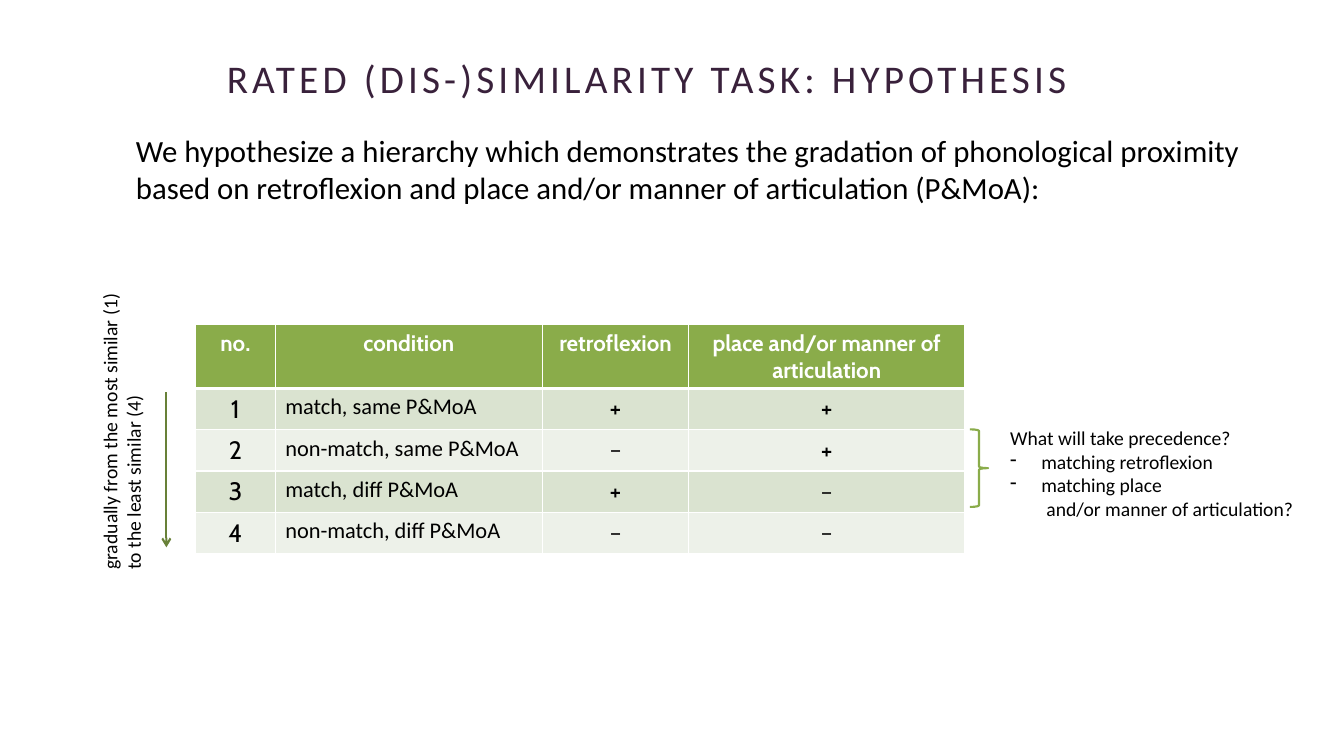
from dataclasses import dataclass

import lxml.etree
import pptx
import pptx.dml.color
import pptx.enum.shapes
import pptx.enum.text
import pptx.oxml.ns
import pptx.util

Inches = pptx.util.Inches
Pt = pptx.util.Pt
qn = pptx.oxml.ns.qn
ALIGN = pptx.enum.text.PP_ALIGN
ANCHOR = pptx.enum.text.MSO_ANCHOR


@dataclass(frozen=True)
class Theme:
    text: str = "000000"
    title: str = "39213B"
    white: str = "FFFFFF"
    green: str = "8AAC4A"
    arrow: str = "688138"
    bands: tuple = ("DAE3D0", "EDF1E9")
    body_font: str = "Calibri"
    table_font: str = "Cabin"
    title_size: int = 28
    body_size: int = 22
    mark_size: int = 18
    cell_size: int = 16
    note_size: int = 14


THEME = Theme()

HEADER = ("no.", "condition", "retroflexion", "place and/or manner of articulation")
CONDITIONS = (
    ("1", "match, same P&MoA", "+", "+"),
    ("2", "non-match, same P&MoA", "–", "+"),
    ("3", "match, diff P&MoA", "+", "–"),
    ("4", "non-match, diff P&MoA", "–", "–"),
)
COLUMN_WIDTHS = (0.79, 2.65, 1.45, 2.74)
HEADER_HEIGHT, ROW_HEIGHT = 0.62, 0.41


def rgb(color):
    return pptx.dml.color.RGBColor.from_string(color)


def set_font(p, size, color=THEME.text, name=THEME.body_font, bold=False):
    p.font.size = Pt(size)
    p.font.name = name
    p.font.bold = bold
    p.font.color.rgb = rgb(color)


def add_text(slide, box, lines, size, color=THEME.text, align=ALIGN.LEFT, wrap=True):
    s = slide.shapes.add_textbox(*map(Inches, box))
    tf = s.text_frame
    tf.word_wrap = wrap
    if not wrap:
        tf.auto_size = pptx.enum.text.MSO_AUTO_SIZE.SHAPE_TO_FIT_TEXT
    for i, line in enumerate(lines):
        p = tf.paragraphs[0] if i == 0 else tf.add_paragraph()
        p.text = line
        p.alignment = align
        set_font(p, size, color)
    return s


def add_title(slide, box):
    s = add_text(slide, box, ["RATED (DIS-)SIMILARITY TASK: HYPOTHESIS"],
                 THEME.title_size, THEME.title, ALIGN.CENTER)
    tf = s.text_frame
    tf.vertical_anchor = ANCHOR.BOTTOM
    tf.margin_right = Inches(0.6)
    p = tf.paragraphs[0]
    p.line_spacing = 0.9
    p.runs[0]._r.get_or_add_rPr().set("spc", "300")


def add_hypothesis(slide, box):
    s = add_text(slide, box, [
        "We hypothesize a hierarchy which demonstrates the gradation of phonological "
        "proximity based on retroflexion and place and/or manner of articulation (P&MoA):"
    ], THEME.body_size, align=ALIGN.JUSTIFY)
    s.text_frame.paragraphs[0].space_before = Pt(6)


def set_borders(cell, top, bottom):
    """Draw white borders, with the top and bottom widths in points."""
    tc_pr = cell._tc.get_or_add_tcPr()
    for side, width in (("L", 1), ("R", 1), ("T", top), ("B", bottom)):
        ln = lxml.etree.SubElement(tc_pr, qn(f"a:ln{side}"), w=str(Pt(width)))
        fill = lxml.etree.SubElement(ln, qn("a:solidFill"))
        lxml.etree.SubElement(fill, qn("a:srgbClr"), val=THEME.white)


def style_cell(cell, row, col):
    set_borders(cell, 3 if row == 1 else 1, 3 if row == 0 else 1)
    cell.fill.solid()
    p = cell.text_frame.paragraphs[0]
    p.alignment = ALIGN.LEFT if row and col == 1 else ALIGN.CENTER
    if row == 0:
        cell.fill.fore_color.rgb = rgb(THEME.green)
        set_font(p, THEME.cell_size, THEME.white, THEME.table_font, bold=True)
        return
    cell.fill.fore_color.rgb = rgb(THEME.bands[(row - 1) % 2])
    if col == 0:
        cell.vertical_anchor = ANCHOR.MIDDLE
    if col == 1:
        set_font(p, THEME.cell_size)
    else:
        name = THEME.body_font if cell.text == "–" else THEME.table_font
        set_font(p, THEME.mark_size, name=name)


def add_conditions(slide, left, top):
    rows = (HEADER, *CONDITIONS)
    heights = [HEADER_HEIGHT] + [ROW_HEIGHT] * len(CONDITIONS)
    box = (left, top, sum(COLUMN_WIDTHS), sum(heights))
    table = slide.shapes.add_table(len(rows), len(HEADER), *map(Inches, box)).table
    table.first_row = table.horz_banding = False
    for column, width in zip(table.columns, COLUMN_WIDTHS):
        column.width = Inches(width)
    for i, (values, height) in enumerate(zip(rows, heights)):
        table.rows[i].height = Inches(height)
        for j, value in enumerate(values):
            cell = table.cell(i, j)
            cell.text = value
            style_cell(cell, i, j)


def add_similarity_scale(slide, box):
    """Add the upward label and, on its right, the arrow pointing down."""
    left, top, width, height = box
    label = (left + (width - height) / 2, top + (height - width) / 2, height, width)
    s = add_text(slide, label,
                 ["gradually from the most similar (1)", "to the least similar (4)"],
                 THEME.note_size, wrap=False)
    s.rotation = 270
    x = left + width + 0.16
    line = slide.shapes.add_connector(
        pptx.enum.shapes.MSO_CONNECTOR.STRAIGHT,
        *map(Inches, (x, top + 1.14, x, top + 2.68)))
    line.line.color.rgb = rgb(THEME.arrow)
    line.line.width = Pt(1.5)
    lxml.etree.SubElement(line.line._get_or_add_ln(), qn("a:tailEnd"), type="arrow")
    lxml.etree.SubElement(line._element.spPr, qn("a:effectLst"))


def set_indent(p, margin, first=0.0, bullet=None):
    p_pr = p._p.get_or_add_pPr()
    p_pr.set("marL", str(Inches(margin)))
    p_pr.set("indent", str(Inches(first)))
    if bullet:
        p_pr.insert(0, p_pr.makeelement(qn("a:buChar"), {"char": bullet}))


def add_question(slide, box):
    """Add the brace beside the two middle conditions and the question on it."""
    left, top, width, height = box
    brace = slide.shapes.add_shape(
        pptx.enum.shapes.MSO_SHAPE.RIGHT_BRACE,
        *map(Inches, (left, top + 0.08, 0.18, 0.77)))
    brace.shadow.inherit = False
    brace.fill.background()
    brace.line.color.rgb = rgb(THEME.green)
    brace.line.width = Pt(1.5)
    s = add_text(slide, (left + 0.3, top, width - 0.3, height),
                 ["What will take precedence?", "matching retroflexion",
                  "matching place", "and/or manner of articulation?"],
                 THEME.note_size, wrap=False)
    _, retroflexion, place, manner = s.text_frame.paragraphs
    for p in (retroflexion, place):
        set_indent(p, 0.31, -0.31, "-")
    set_indent(manner, 0.36)


def main():
    prs = pptx.Presentation()
    prs.slide_width, prs.slide_height = Inches(13.33), Inches(7.5)
    slide = prs.slides.add_slide(prs.slide_layouts[6])
    add_title(slide, (1.48, 0.43, 10.38, 0.63))
    add_hypothesis(slide, (1.25, 1.26, 11.14, 4.75))
    add_conditions(slide, 1.94, 3.22)
    add_similarity_scale(slide, (0.92, 2.75, 0.57, 3))
    add_question(slide, (9.62, 4.18, 3.33, 1.04))
    prs.save("out.pptx")


if __name__ == "__main__":
    main()
